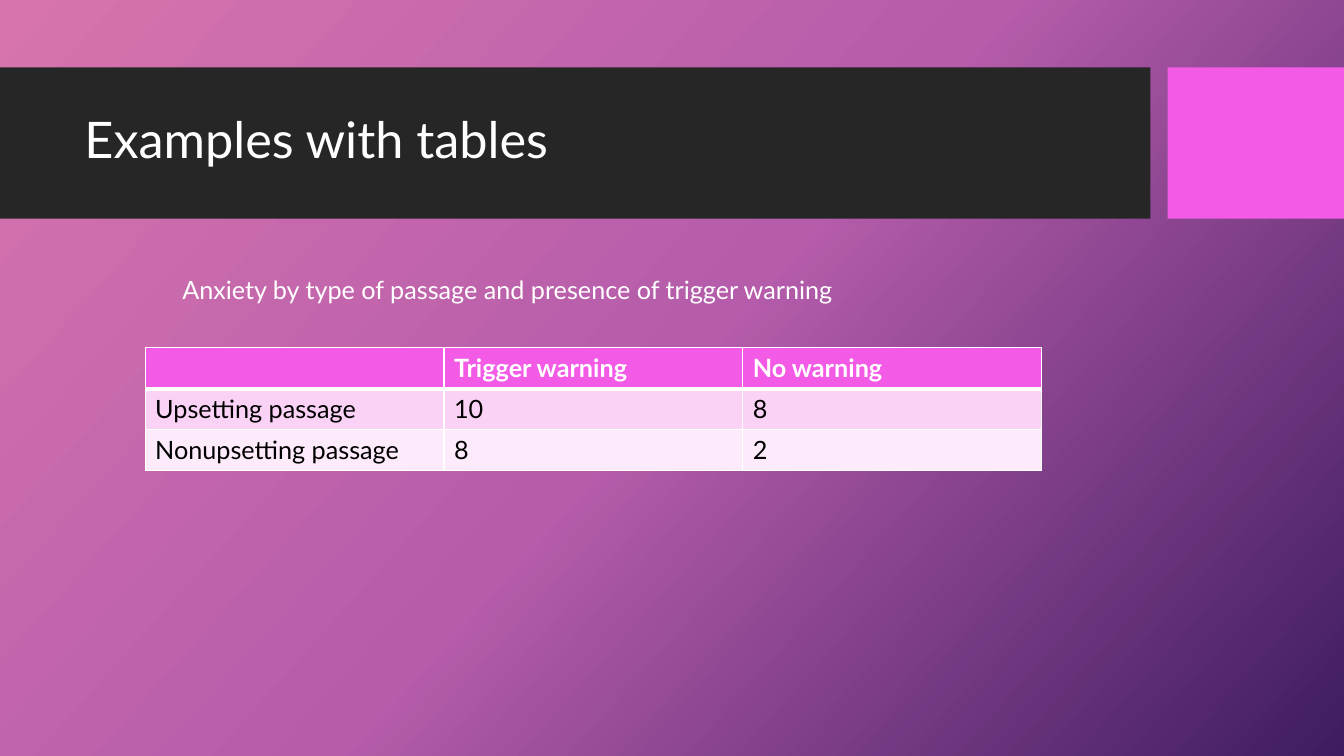
from copy import deepcopy
from dataclasses import dataclass

from lxml import etree
from pptx import Presentation
from pptx.dml.color import RGBColor
from pptx.enum.shapes import MSO_SHAPE
from pptx.enum.text import MSO_ANCHOR, MSO_AUTO_SIZE
from pptx.oxml.ns import qn
from pptx.util import Inches, Pt

RECT = MSO_SHAPE.RECTANGLE
TOP = MSO_ANCHOR.TOP
MIDDLE = MSO_ANCHOR.MIDDLE
GROW = MSO_AUTO_SIZE.SHAPE_TO_FIT_TEXT


@dataclass(frozen=True)
class Theme:
    font: str = "Lato"
    title: int = 36
    body: int = 18
    white: str = "FFFFFF"
    black: str = "000000"
    dark: str = "262626"
    pink: str = "F35AE6"
    bands: tuple = ("FAD2F5", "FDEAFA")
    back: tuple = ("D774AD", "B55CAB", "3E1C5F")
    angle: int = 42
    thin: int = 1
    thick: int = 3


class Deck:
    def __init__(self, theme):
        self.theme = theme
        self.file = Presentation()
        self.file.slide_width = Inches(13.33)
        self.file.slide_height = Inches(7.5)
        self.slide = self.file.slides.add_slide(self.file.slide_layouts[6])
        self.shapes = self.slide.shapes

    def place(self, left, top, width, height):
        col = self.file.slide_width / 100
        row = self.file.slide_height / 100
        return [round(n) for n in (left * col, top * row, width * col, height * row)]

    def paint(self):
        fill = self.slide.background.fill
        fill.gradient()
        fill.gradient_angle = 360 - self.theme.angle
        stops = self.slide.element.find(".//" + qn("a:gsLst"))
        stops.insert(1, deepcopy(stops[0]))
        for i, (stop, color) in enumerate(zip(fill.gradient_stops, self.theme.back)):
            stop.position = i / 2
            stop.color.rgb = RGBColor.from_string(color)

    def block(self, area, color):
        shape = self.shapes.add_shape(RECT, *self.place(*area))
        shape.shadow.inherit = False
        shape.fill.solid()
        shape.fill.fore_color.rgb = RGBColor.from_string(color)
        shape.line.fill.background()

    def style(self, frame, size, color, bold=False):
        for run in frame.paragraphs[0].runs:
            run.font.name = self.theme.font
            run.font.size = Pt(size)
            run.font.bold = bold
            run.font.color.rgb = RGBColor.from_string(color)

    def label(self, area, text, size, wrap=True, anchor=TOP, space=1.0):
        frame = self.shapes.add_textbox(*self.place(*area)).text_frame
        frame.text = text
        frame.word_wrap = wrap
        frame.vertical_anchor = anchor
        if not wrap:
            frame.auto_size = GROW
        frame.paragraphs[0].line_spacing = space
        self.style(frame, size, self.theme.white)

    def edge(self, cell, side, width):
        props = cell._tc.get_or_add_tcPr()
        line = etree.SubElement(props, qn("a:ln" + side), w=str(Pt(width)))
        fill = etree.SubElement(line, qn("a:solidFill"))
        etree.SubElement(fill, qn("a:srgbClr"), val=self.theme.white)

    def table(self, area, rows):
        theme = self.theme
        grid = self.shapes.add_table(len(rows), len(rows[0]), *self.place(*area)).table
        for i, row in enumerate(rows):
            head = i == 0
            back = theme.pink if head else theme.bands[(i - 1) % 2]
            ink = theme.white if head else theme.black
            wide = {"T": i == 1, "B": head}
            for j, text in enumerate(row):
                cell = grid.cell(i, j)
                cell.text = text
                self.style(cell.text_frame, theme.body, ink, head)
                for side in "LRTB":
                    self.edge(cell, side, theme.thick if wide.get(side) else theme.thin)
                cell.fill.solid()
                cell.fill.fore_color.rgb = RGBColor.from_string(back)


def main():
    theme = Theme()
    deck = Deck(theme)
    deck.paint()
    deck.block((0, 8.93, 85.6, 20), theme.dark)
    deck.block((86.87, 8.93, 13.13, 20), theme.pink)
    deck.label((5.55, 10.93, 78.84, 15.73), "Examples with tables",
               theme.title, anchor=MIDDLE, space=0.9)
    deck.table((10.8, 46, 66.7, 16.27), [
        ("", "Trigger warning", "No warning"),
        ("Upsetting passage", "10", "8"),
        ("Nonupsetting passage", "8", "2"),
    ])
    deck.label((12.83, 35.6, 51.84, 5.33),
               "Anxiety by type of passage and presence of trigger warning",
               theme.body, wrap=False)
    deck.file.save("out.pptx")


if __name__ == "__main__":
    main()
